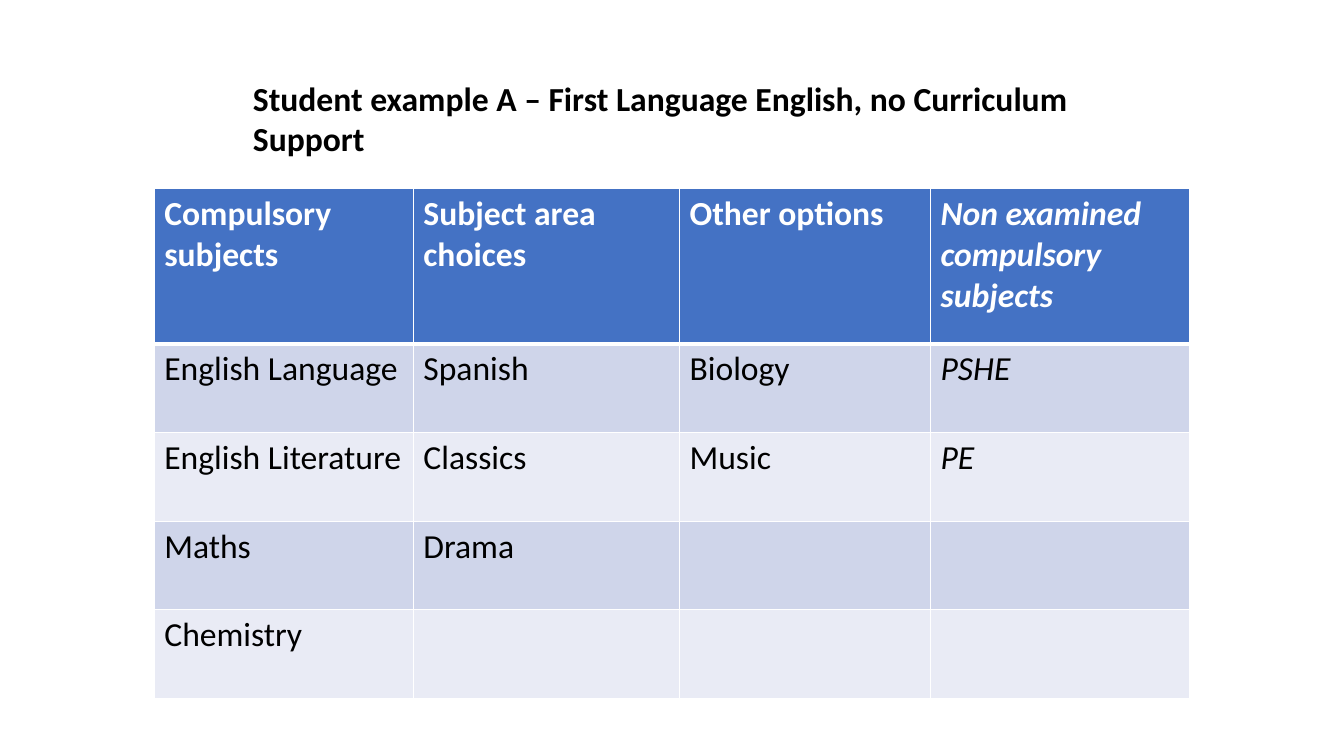
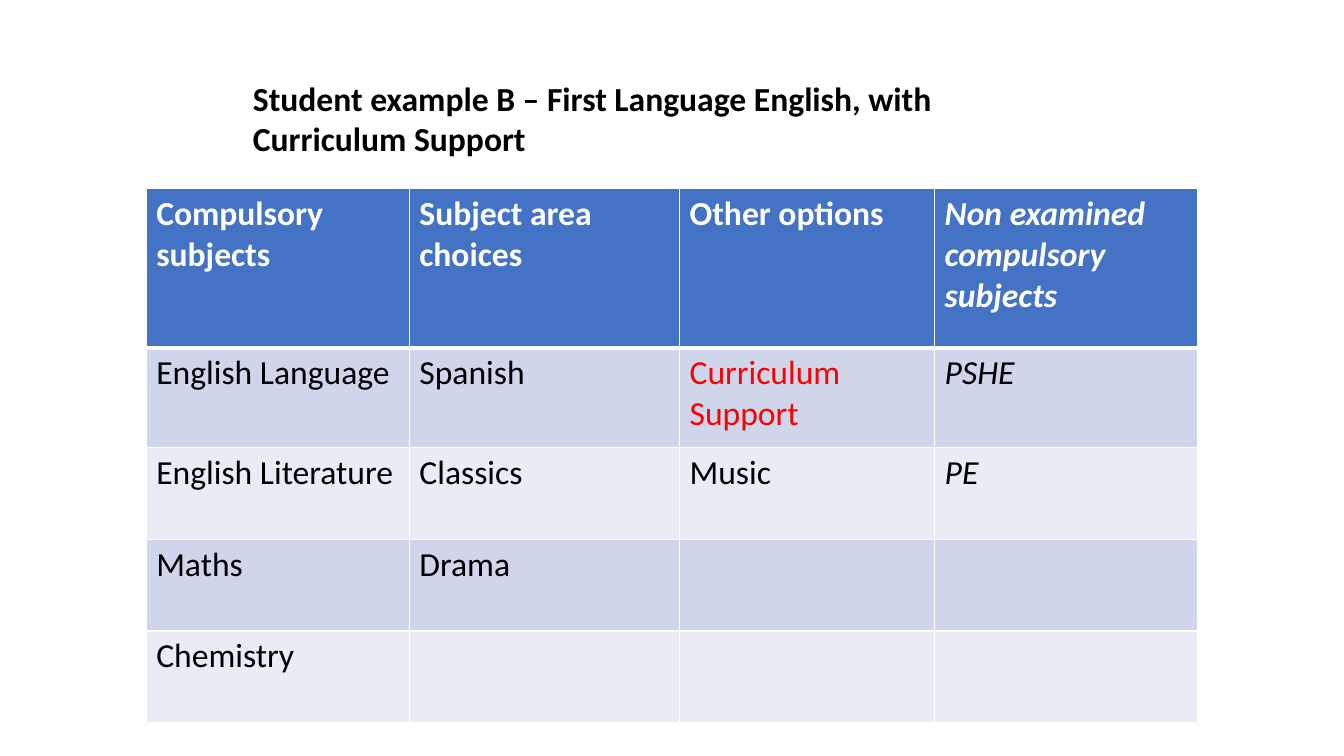
from dataclasses import dataclass

from lxml import etree
from pptx import Presentation
from pptx import util as u
from pptx.dml import color
from pptx.enum import text
from pptx.oxml import ns

FONT = "Calibri"
TEXT_SIZE = u.Pt(24)
BLACK = "000000"
WHITE = "FFFFFF"
RED = "FF0000"
HEADER_FILL = "4472C4"
BAND_FILLS = ("CFD5EA", "E9EBF5")
GRID_WIDTH = 1
HEADER_RULE_WIDTH = 3
TABLE_TOP = 1.87
HEADINGS = (
    "Compulsory subjects",
    "Subject area choices",
    "Other options",
    "Non examined compulsory subjects",
)
COMPULSORY = ("English Language", "English Literature", "Maths", "Chemistry")
CHOICES = ("Spanish", "Classics", "Drama", "")
NON_EXAMINED = ("PSHE", "PE", "", "")
NON_EXAMINED_COLUMN = 3


@dataclass(frozen=True)
class StudentExample:
    title: str
    other_options: tuple[str, ...]
    left: float
    column_widths: tuple[float, ...]
    row_heights: tuple[float, ...]
    highlight: str = ""


EXAMPLES = (
    StudentExample(
        title="Student example A – First Language English, no Curriculum Support",
        other_options=("Biology", "Music", "", ""),
        left=1.53,
        column_widths=(2.57, 2.64, 2.49, 2.57),
        row_heights=(1.54, 0.88, 0.88, 0.88, 0.88),
    ),
    StudentExample(
        title="Student example B – First Language English, with Curriculum Support",
        other_options=("Curriculum Support", "Music", "", ""),
        left=1.45,
        column_widths=(2.61, 2.68, 2.53, 2.61),
        row_heights=(1.58, 0.99, 0.91, 0.91, 0.91),
        highlight="Curriculum Support",
    ),
)


def rgb(value: str) -> color.RGBColor:
    return color.RGBColor.from_string(value)


def style_paragraph(paragraph, colour: str, bold: bool, italic: bool = False) -> None:
    font = paragraph.font
    font.name = FONT
    font.size = TEXT_SIZE
    font.bold = bold
    font.italic = italic
    font.color.rgb = rgb(colour)


def set_borders(cell, top: float, bottom: float) -> None:
    properties = cell._tc.get_or_add_tcPr()
    widths = {"lnL": GRID_WIDTH, "lnR": GRID_WIDTH, "lnT": top, "lnB": bottom}
    for position, (side, width) in enumerate(widths.items()):
        line = etree.Element(ns.qn(f"a:{side}"), w=str(u.Pt(width)))
        fill = etree.SubElement(line, ns.qn("a:solidFill"))
        etree.SubElement(fill, ns.qn("a:srgbClr"), val=WHITE)
        properties.insert(position, line)


def add_title(slide, title: str) -> None:
    box = slide.shapes.add_textbox(
        u.Inches(2.41), u.Inches(0.72), u.Inches(8.38), u.Inches(0.91)
    )
    frame = box.text_frame
    frame.word_wrap = True
    frame.auto_size = text.MSO_AUTO_SIZE.SHAPE_TO_FIT_TEXT
    frame.text = title
    style_paragraph(frame.paragraphs[0], BLACK, bold=True)


def fill_cell(cell, content: str, row: int, column: int, highlight: str) -> None:
    is_header = row == 0
    cell.fill.solid()
    cell.fill.fore_color.rgb = rgb(HEADER_FILL if is_header else BAND_FILLS[(row - 1) % 2])
    set_borders(
        cell,
        top=HEADER_RULE_WIDTH if row == 1 else GRID_WIDTH,
        bottom=HEADER_RULE_WIDTH if is_header else GRID_WIDTH,
    )
    if is_header:
        colour = WHITE
    elif content and content == highlight:
        colour = RED
    else:
        colour = BLACK
    cell.text = content
    style_paragraph(
        cell.text_frame.paragraphs[0],
        colour,
        bold=is_header,
        italic=column == NON_EXAMINED_COLUMN,
    )


def add_subjects(slide, example: StudentExample) -> None:
    rows = (HEADINGS, *zip(COMPULSORY, CHOICES, example.other_options, NON_EXAMINED))
    subjects = slide.shapes.add_table(
        len(rows),
        len(HEADINGS),
        u.Inches(example.left),
        u.Inches(TABLE_TOP),
        u.Inches(sum(example.column_widths)),
        u.Inches(sum(example.row_heights)),
    ).table
    for column, width in zip(subjects.columns, example.column_widths):
        column.width = u.Inches(width)
    for row, height in zip(subjects.rows, example.row_heights):
        row.height = u.Inches(height)
    for row_index, contents in enumerate(rows):
        for column_index, content in enumerate(contents):
            cell = subjects.cell(row_index, column_index)
            fill_cell(cell, content, row_index, column_index, example.highlight)


def main() -> None:
    deck = Presentation()
    deck.slide_width = u.Inches(13.33)
    deck.slide_height = u.Inches(7.5)
    for example in EXAMPLES:
        slide = deck.slides.add_slide(deck.slide_layouts[6])
        add_subjects(slide, example)
        add_title(slide, example.title)
    deck.save("out.pptx")


if __name__ == "__main__":
    main()
